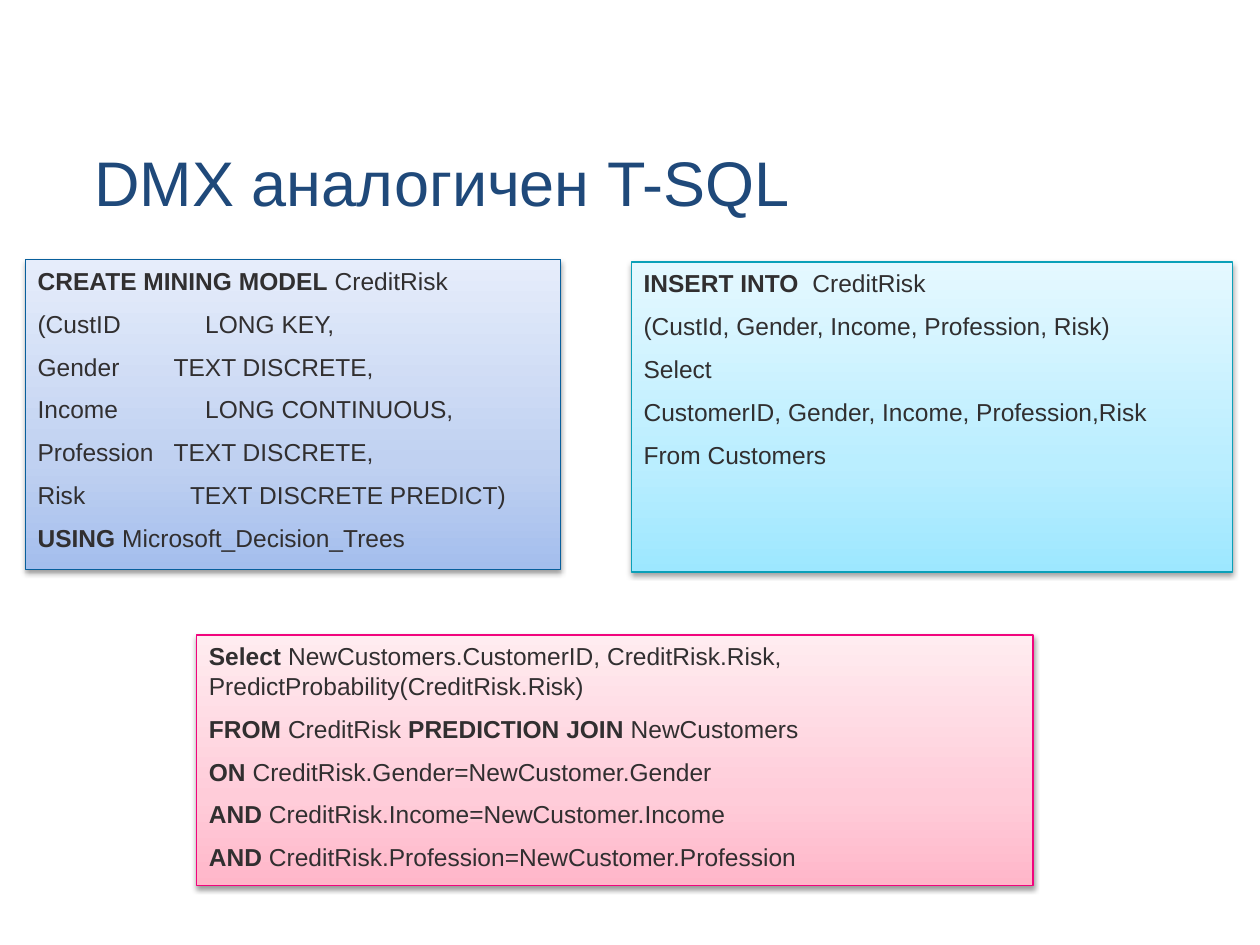
from copy import deepcopy
from dataclasses import dataclass

from lxml import etree
from pptx import Presentation
from pptx import util as u
from pptx.dml.color import RGBColor
from pptx.enum import shapes, text
from pptx.oxml import ns


@dataclass(frozen=True)
class Theme:
    font: str = "Arial"
    title_size: float = 36
    code_size: float = 14
    code_gap: float = 7.7
    outline: float = 0.75
    title: str = "1F497A"
    code: str = "312F30"
    shadow: str = "000000"
    stops: tuple = (0, 0.35, 1)
    blue: tuple = ("085F9C", "A4BEED", "C0D1F1", "E6EDFB")
    cyan: tuple = ("0BA0B8", "9DE7FF", "BAEEFF", "E5F8FF")
    pink: tuple = ("F1047D", "FFB6C9", "FFCCD9", "FFECF0")


def apply(target, values):
    for name, value in values.items():
        setattr(target, name, value)


class SlideBuilder:
    COLUMNS, ROWS = 100, 75

    def __init__(self, deck, theme):
        self.theme = theme
        self.slide = deck.slides.add_slide(deck.slide_layouts[6])
        self.column = deck.slide_width / self.COLUMNS
        self.row = deck.slide_height / self.ROWS

    def area(self, left, top, width, height):
        return [round(n * unit) for n, unit in zip(
            (left, top, width, height), (self.column, self.row) * 2)]

    def add_runs(self, paragraph, marked, size, color):
        for index, part in enumerate(marked.split("*")):
            if part:
                run = paragraph.add_run()
                run.text = part
                apply(run.font, {"name": self.theme.font, "size": u.Pt(size),
                                 "bold": index % 2 == 1})
                run.font.color.rgb = RGBColor.from_string(color)

    def title(self, wording, *place):
        frame = self.slide.shapes.add_textbox(*self.area(*place)).text_frame
        apply(frame, {"word_wrap": True, "margin_left": 0, "margin_right": 0,
                      "margin_top": 0, "margin_bottom": 0,
                      "vertical_anchor": text.MSO_ANCHOR.MIDDLE})
        heading = frame.paragraphs[0]
        heading.line_spacing = 0.9
        self.add_runs(heading, wording, self.theme.title_size, self.theme.title)

    def gradient(self, panel, colors):
        panel.fill.gradient()
        panel.fill.gradient_angle = 90
        stop_list = panel._element.spPr.find(".//" + ns.qn("a:gsLst"))
        stop_list.append(deepcopy(stop_list[-1]))
        for stop, position, color in zip(
                panel.fill.gradient_stops, self.theme.stops, colors):
            stop.position = position
            stop.color.rgb = RGBColor.from_string(color)

    def shadow(self, panel):
        panel.shadow.inherit = False
        effects = panel._element.spPr.find(ns.qn("a:effectLst"))
        outer = etree.SubElement(
            effects, ns.qn("a:outerShdw"), blurRad="40000", dist="20000",
            dir="5400000", rotWithShape="0")
        color = etree.SubElement(outer, ns.qn("a:srgbClr"), val=self.theme.shadow)
        etree.SubElement(color, ns.qn("a:alpha"), val="38000")

    def tab_stop(self, paragraph, position):
        tabs = etree.SubElement(
            paragraph._p.get_or_add_pPr(), ns.qn("a:tabLst"))
        etree.SubElement(tabs, ns.qn("a:tab"), pos=str(u.Inches(position)), algn="l")

    def code_panel(self, lines, palette, *place):
        panel = self.slide.shapes.add_shape(
            shapes.MSO_SHAPE.RECTANGLE, *self.area(*place))
        outline, *colors = palette
        self.gradient(panel, colors)
        panel.line.color.rgb = RGBColor.from_string(outline)
        panel.line.width = u.Pt(self.theme.outline)
        self.shadow(panel)
        frame = panel.text_frame
        apply(frame, {"word_wrap": True, "vertical_anchor": text.MSO_ANCHOR.TOP})
        for index, (line, tab) in enumerate(lines):
            paragraph = frame.add_paragraph() if index else frame.paragraphs[0]
            if tab:
                self.tab_stop(paragraph, tab)
            apply(paragraph, {
                "alignment": text.PP_ALIGN.LEFT,
                "space_before": u.Pt(self.theme.code_gap if index else 0)})
            self.add_runs(paragraph, line, self.theme.code_size, self.theme.code)


CREATE_MODEL = [
    ("*CREATE MINING MODEL* CreditRisk", None),
    ("(CustID\tLONG KEY,", 1.33),
    ("Gender\tTEXT DISCRETE,", 1.08),
    ("Income\tLONG CONTINUOUS,", 1.33),
    ("Profession\tTEXT DISCRETE,", 1.08),
    ("Risk\tTEXT DISCRETE PREDICT)", 1.21),
    ("*USING* Microsoft_Decision_Trees", None),
]
TRAIN_MODEL = [
    ("*INSERT INTO*\tCreditRisk", 1.34),
    ("(CustId, Gender, Income, Profession, Risk)", None),
    ("Select", None),
    ("CustomerID, Gender, Income, Profession,Risk", None),
    ("From Customers", None),
]
PREDICT = [
    ("*Select* NewCustomers.CustomerID, CreditRisk.Risk, "
     "PredictProbability(CreditRisk.Risk)", None),
    ("*FROM* CreditRisk *PREDICTION JOIN* NewCustomers", None),
    ("*ON* CreditRisk.Gender=NewCustomer.Gender", None),
    ("*AND* CreditRisk.Income=NewCustomer.Income", None),
    ("*AND* CreditRisk.Profession=NewCustomer.Profession", None),
]


def main():
    deck = Presentation()
    apply(deck, {"slide_width": u.Inches(10), "slide_height": u.Inches(7.5)})
    theme = Theme()
    builder = SlideBuilder(deck, theme)
    builder.title("DMX аналогичен T-SQL", 7.5, 11, 85, 7.5)
    builder.code_panel(CREATE_MODEL, theme.blue, 2, 20.6, 42.5, 24.6)
    builder.code_panel(TRAIN_MODEL, theme.cyan, 50.1, 20.8, 47.7, 24.6)
    builder.code_panel(PREDICT, theme.pink, 15.6, 50.4, 66.4, 19.9)
    deck.save("out.pptx")


if __name__ == "__main__":
    main()
